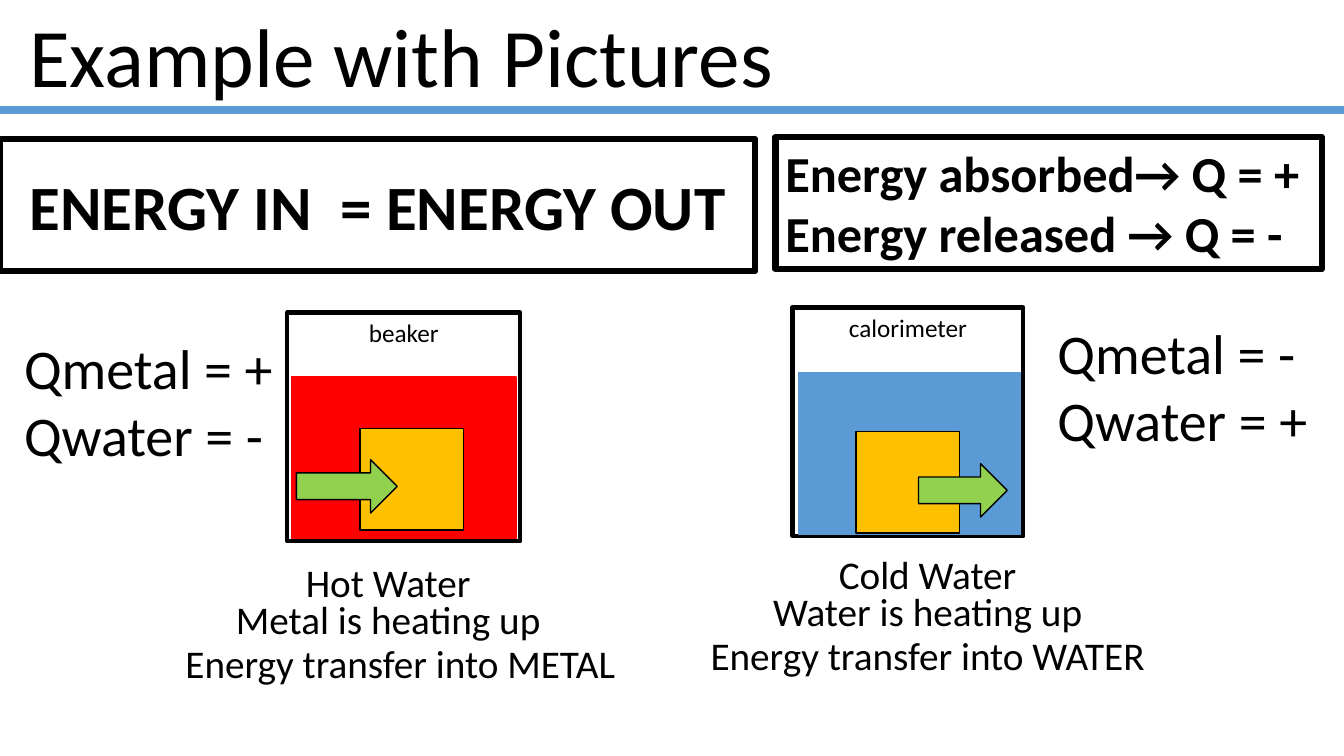
from lxml import etree
from pptx import Presentation
from pptx import util as u
from pptx.dml.color import RGBColor
from pptx.enum import shapes, text
from pptx.oxml.ns import qn

COLOURS = {"black": "000000", "white": "FFFFFF", "red": "FF0000",
           "blue": "5B9BD5", "gold": "FFC000", "green": "92D050"}
COLUMNS, ROWS = 13.33, 7.5  # grid cells across and down the slide
SHAPE = shapes.MSO_SHAPE
ALIGN = text.PP_ALIGN
ANCHOR = text.MSO_ANCHOR


def colour(name):
    return RGBColor.from_string(COLOURS[name])


def write(box, lines, size, bold=False, align=ALIGN.LEFT, anchor=ANCHOR.TOP, spacing=None):
    """Fill a shape's text frame, one paragraph per line."""
    frame = box.text_frame
    frame.word_wrap = True
    frame.auto_size = text.MSO_AUTO_SIZE.NONE
    frame.vertical_anchor = anchor
    for index, line in enumerate(lines):
        para = frame.paragraphs[0] if index == 0 else frame.add_paragraph()
        para.alignment = align
        if spacing:
            para.line_spacing = spacing
        span = para.add_run()
        span.text = line
        span.font.name = "Calibri"
        span.font.size = u.Pt(size)
        span.font.bold = bold
        span.font.color.rgb = colour("black")


class Page:
    def __init__(self, deck):
        self.cell_width = deck.slide_width / COLUMNS
        self.cell_height = deck.slide_height / ROWS
        self.slide = deck.slides.add_slide(deck.slide_layouts[5])

    def place(self, left, top, width, height):
        return (round(left * self.cell_width), round(top * self.cell_height),
                round(width * self.cell_width), round(height * self.cell_height))

    def title(self, wording, area, size):
        box = self.slide.shapes.title
        box.left, box.top, box.width, box.height = self.place(*area)
        write(box, [wording], size, anchor=ANCHOR.MIDDLE, spacing=0.9)

    def rule(self, row, line, weight):
        left, top, width, _ = self.place(0, row, COLUMNS, 0)
        rule = self.slide.shapes.add_connector(
            shapes.MSO_CONNECTOR.STRAIGHT, left, top, left + width, top)
        rule.line.color.rgb = colour(line)
        rule.line.width = u.Pt(weight)
        etree.SubElement(rule.element.spPr, qn("a:effectLst"))

    def shape(self, kind, area, fill=None, line="black", weight=1):
        box = self.slide.shapes.add_shape(kind, *self.place(*area))
        box.shadow.inherit = False
        if fill:
            box.fill.solid()
            box.fill.fore_color.rgb = colour(fill)
        else:
            box.fill.background()
        box.line.color.rgb = colour(line)
        box.line.width = u.Pt(weight)
        return box

    def label(self, lines, area, size, **style):
        write(self.slide.shapes.add_textbox(*self.place(*area)), lines, size, **style)

    def vessel(self, name, area, water, liquid, metal, arrow):
        """A container of water with a metal block and a heat arrow."""
        glass = self.shape(SHAPE.RECTANGLE, area, "white", weight=3)
        write(glass, [name], 18, align=ALIGN.CENTER)
        self.shape(SHAPE.RECTANGLE, water, liquid, liquid)
        self.shape(SHAPE.RECTANGLE, (*metal, 1.03, 1.01), "gold")
        self.shape(SHAPE.RIGHT_ARROW, (*arrow, 0.53), "green")

    def captions(self, lines, centres, top):
        for line, centre, drop in zip(lines, centres, (0, 0.37, 0.81)):
            self.label([line], (centre - 2.32, top + drop, 4.64, 0.38), 28,
                       align=ALIGN.CENTER, anchor=ANCHOR.MIDDLE)


def main():
    deck = Presentation()
    deck.slide_width, deck.slide_height = u.Inches(13.33), u.Inches(7.5)
    page = Page(deck)

    # Heading
    page.title("Example with Pictures", (0.19, 0.15, 12.82, 0.91), 59.4)
    page.rule(1.09, "blue", 6)

    # Energy rules
    signs = page.shape(SHAPE.RECTANGLE, (7.69, 1.36, 5.42, 1.31), weight=4.5)
    write(signs, ["Energy absorbed→ Q = +", "Energy released → Q = -"], 36, bold=True)
    balance = page.shape(SHAPE.FLOWCHART_PROCESS, (0, 1.38, 7.49, 1.31), "white", weight=4.5)
    write(balance, ["ENERGY IN  = ENERGY OUT"], 45, bold=True,
          align=ALIGN.CENTER, anchor=ANCHOR.MIDDLE)

    # Hot water heats the metal
    page.vessel("beaker", (2.85, 3.1, 2.31, 2.27), (2.89, 3.74, 2.23, 1.6), "red",
                metal=(3.57, 4.25), arrow=(2.94, 4.56, 1))
    page.captions(["Hot Water", "Metal is heating up", "Energy transfer into METAL"],
                  (3.85, 3.85, 3.97), 5.58)
    page.label(["Qmetal = +", "Qwater = -"], (0.14, 3.26, 3.31, 1.45), 40)

    # Hot metal heats the water
    page.vessel("calorimeter", (7.86, 3.05, 2.29, 2.27), (7.92, 3.7, 2.2, 1.6), "blue",
                metal=(8.49, 4.28), arrow=(9.11, 4.6, 0.88))
    page.captions(["Cold Water", "Water is heating up", "Energy transfer into WATER"],
                  (9.2, 9.2, 9.2), 5.5)
    page.label(["Qmetal = -", "Qwater = +"], (10.39, 3.11, 2.94, 1.45), 40)

    deck.save("out.pptx")


if __name__ == "__main__":
    main()
